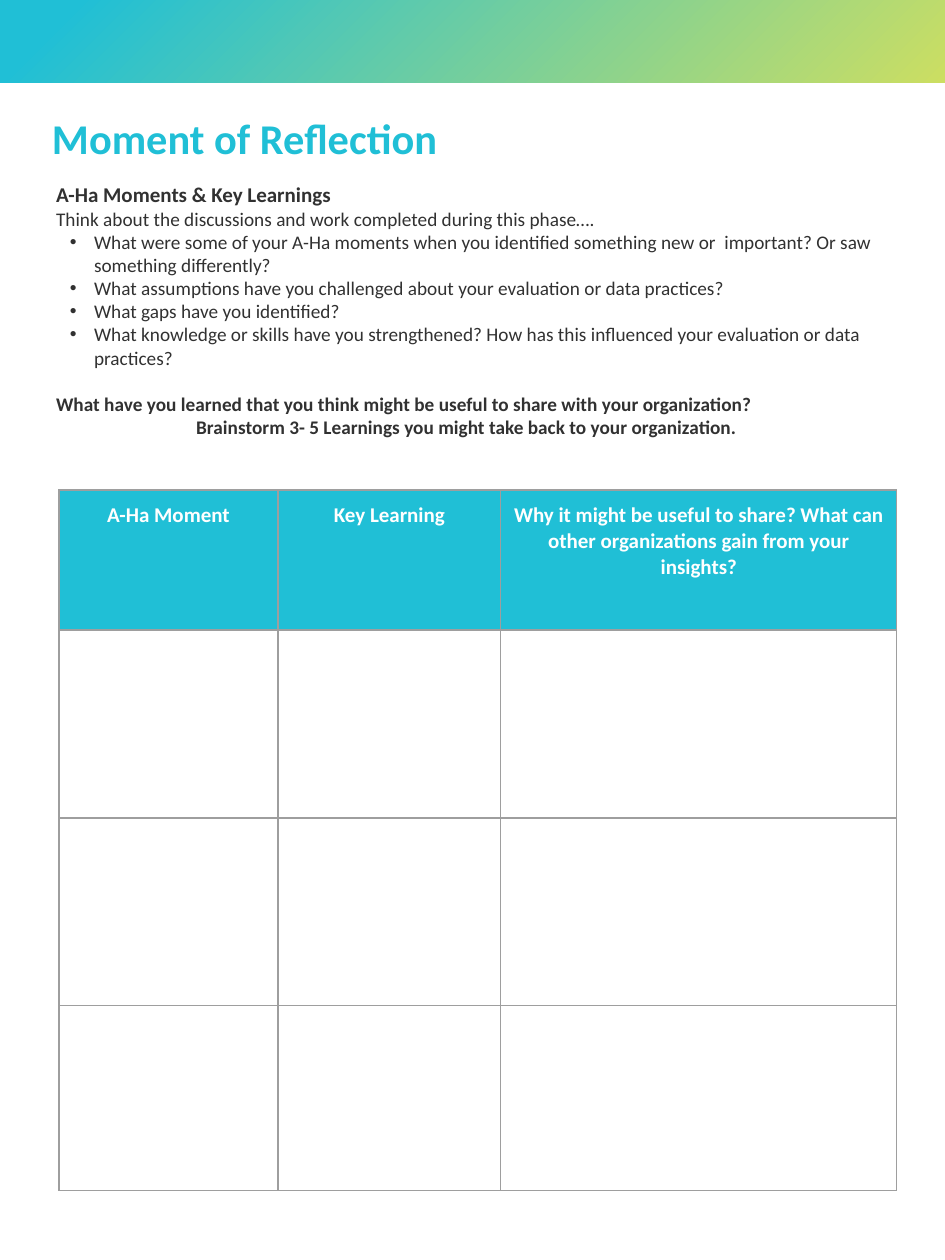
import copy
import dataclasses

import lxml.etree
import pptx
import pptx.dml.color
import pptx.enum.shapes
import pptx.enum.text
import pptx.oxml.ns
import pptx.util

EMU_PER_PX = 914400 / 126
FONT = "Calibri"
CYAN = "20BFD6"
LIME = "CCDE62"
INK = "313131"
WHITE = "FFFFFF"
GRID = "9E9E9E"
CENTER = pptx.enum.text.PP_ALIGN.CENTER
LEFT = pptx.enum.text.PP_ALIGN.LEFT


@dataclasses.dataclass(frozen=True)
class Line:
    text: str
    size: float = 11
    bold: bool = False
    color: str = INK
    align: pptx.enum.text.PP_ALIGN = LEFT
    bullet: bool = False
    space_before: float = 0
    line_spacing: float = 1.0


@dataclasses.dataclass(frozen=True)
class Box:
    left: int
    top: int
    width: int
    height: int


TITLE = Line("Moment of Reflection", 24.2, True, CYAN, line_spacing=0.9)
PROMPTS = [
    Line("A-Ha Moments & Key Learnings", 12, True),
    Line("Think about the discussions and work completed during this phase…."),
    Line("What were some of your A-Ha moments when you identified something new or  important? "
         "Or saw something differently?", bullet=True),
    Line("What assumptions have you challenged about your evaluation or data practices?", bullet=True),
    Line("What gaps have you identified?", bullet=True),
    Line("What knowledge or skills have you strengthened? How has this influenced your "
         "evaluation or data practices?", bullet=True),
    Line("What have you learned that you think might be useful to share with your organization?",
         bold=True, space_before=13.4),
    Line("Brainstorm 3- 5 Learnings you might take back to your organization.", bold=True, align=CENTER),
]
HEADERS = [
    "A-Ha Moment",
    "Key Learning",
    "Why it might be useful to share? What can other organizations gain from your insights?",
]
COLUMN_WIDTHS = [219, 223, 396]
ROW_HEIGHTS = [140, 188, 188, 185]


def px(value: int) -> pptx.util.Emu:
    return pptx.util.Emu(round(value * EMU_PER_PX))


def rgb(color: str) -> pptx.dml.color.RGBColor:
    return pptx.dml.color.RGBColor.from_string(color)


def place(box: Box) -> tuple:
    return px(box.left), px(box.top), px(box.width), px(box.height)


def add_child(parent, tag: str, **attributes: str):
    child = lxml.etree.SubElement(parent, pptx.oxml.ns.qn(tag))
    for name, value in attributes.items():
        child.set(name, value)
    return child


def write_paragraph(paragraph, line: Line) -> None:
    paragraph.text = line.text
    paragraph.alignment = line.align
    paragraph.line_spacing = line.line_spacing
    paragraph.space_before = pptx.util.Pt(line.space_before)
    for run in paragraph.runs:
        run.font.name = FONT
        run.font.size = pptx.util.Pt(line.size)
        run.font.bold = line.bold
        run.font.color.rgb = rgb(line.color)
    if line.bullet:
        paragraph.level = 1
        properties = paragraph._p.get_or_add_pPr()
        properties.set("marL", str(px(38)))
        properties.set("indent", str(px(-24)))
        add_child(add_child(properties, "a:buClr"), "a:srgbClr", val=INK)
        add_child(properties, "a:buFont", typeface="Arial")
        add_child(properties, "a:buChar", char="•")


def add_text(slide, box: Box, lines: list[Line], inset_x: int, inset_y: int,
             anchor: pptx.enum.text.MSO_ANCHOR) -> None:
    text_frame = slide.shapes.add_textbox(*place(box)).text_frame
    text_frame.word_wrap = True
    text_frame.vertical_anchor = anchor
    text_frame.margin_left = text_frame.margin_right = px(inset_x)
    text_frame.margin_top = text_frame.margin_bottom = px(inset_y)
    for index, line in enumerate(lines):
        paragraph = text_frame.add_paragraph() if index else text_frame.paragraphs[0]
        write_paragraph(paragraph, line)


def add_banner(slide, box: Box) -> None:
    banner = slide.shapes.add_shape(pptx.enum.shapes.MSO_SHAPE.RECTANGLE, *place(box))
    banner.shadow.inherit = False
    banner.line.fill.background()
    banner.fill.gradient()
    banner.fill.gradient_angle = 315
    stops = banner.fill.gradient_stops
    for stop, color in zip(stops, (CYAN, LIME)):
        stop.color.rgb = rgb(color)
    first_stop = stops[0]._gs
    second_stop = copy.deepcopy(first_stop)
    second_stop.set("pos", "8000")
    first_stop.addnext(second_stop)


def style_cell(cell, fill: str) -> None:
    cell.margin_left = cell.margin_right = px(13)
    cell.margin_top = cell.margin_bottom = px(13)
    properties = cell._tc.get_or_add_tcPr()
    for side in ("a:lnL", "a:lnR", "a:lnT", "a:lnB"):
        border = add_child(properties, side, w=str(pptx.util.Pt(0.75)))
        add_child(add_child(border, "a:solidFill"), "a:srgbClr", val=GRID)
    cell.fill.solid()
    cell.fill.fore_color.rgb = rgb(fill)


def add_reflection_table(slide, left: int, top: int) -> None:
    box = Box(left, top, sum(COLUMN_WIDTHS), sum(ROW_HEIGHTS))
    table = slide.shapes.add_table(len(ROW_HEIGHTS), len(COLUMN_WIDTHS), *place(box)).table
    table.horz_banding = False
    for column, width in zip(table.columns, COLUMN_WIDTHS):
        column.width = px(width)
    for index, (row, height) in enumerate(zip(table.rows, ROW_HEIGHTS)):
        row.height = px(height)
        for cell in row.cells:
            style_cell(cell, WHITE if index else CYAN)
    for cell, header in zip(table.rows[0].cells, HEADERS):
        write_paragraph(cell.text_frame.paragraphs[0], Line(header, 12, True, WHITE, CENTER))


def main() -> None:
    presentation = pptx.Presentation()
    presentation.slide_width = px(945)
    presentation.slide_height = px(1260)
    slide = presentation.slides.add_slide(presentation.slide_layouts[6])
    add_banner(slide, Box(0, -4, 945, 87))
    add_text(slide, Box(39, 106, 815, 69), [TITLE], 13, 6, pptx.enum.text.MSO_ANCHOR.MIDDLE)
    add_text(slide, Box(48, 178, 837, 312), PROMPTS, 8, 4, pptx.enum.text.MSO_ANCHOR.TOP)
    add_reflection_table(slide, 59, 490)
    presentation.save("out.pptx")


if __name__ == "__main__":
    main()
